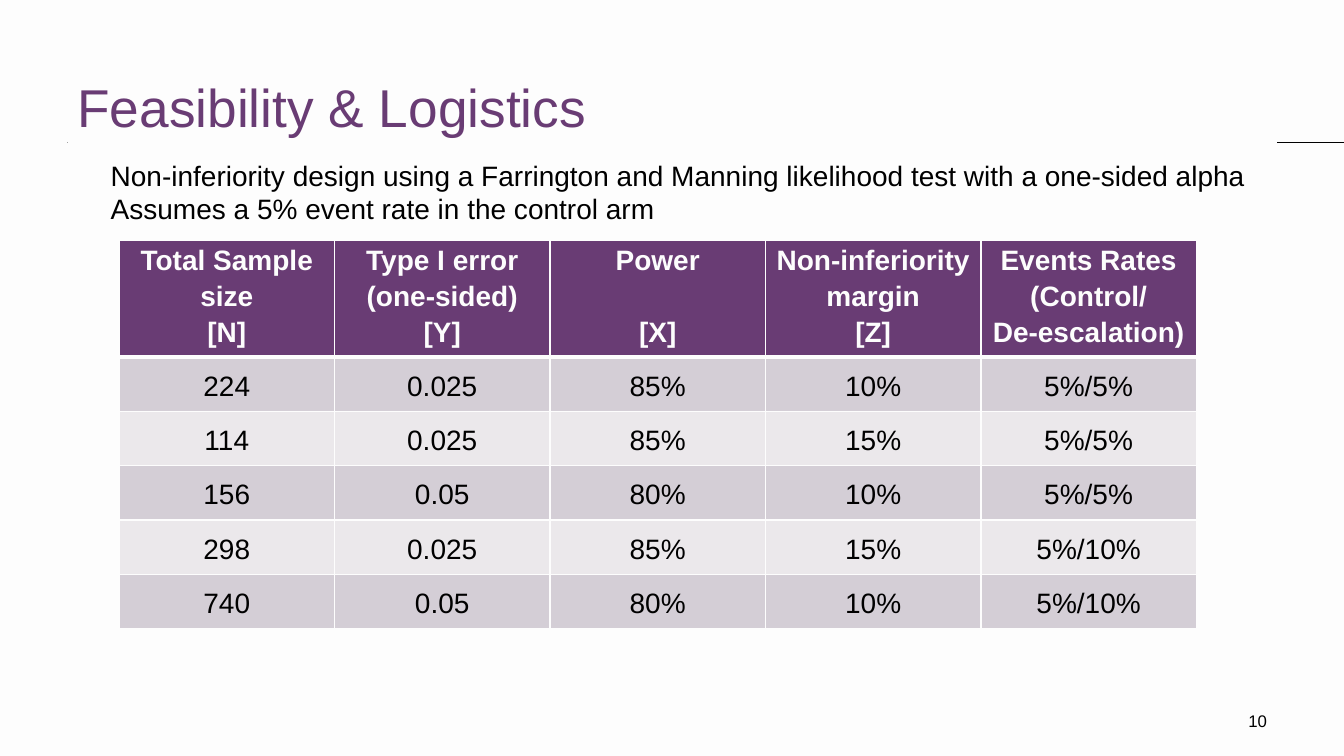
import pptx
import pptx.util
import pptx.dml.color
import pptx.enum.shapes
import pptx.enum.text
import pptx.oxml
import pptx.oxml.ns

Cm = pptx.util.Cm
Pt = pptx.util.Pt
RGBColor = pptx.dml.color.RGBColor
ALIGN = pptx.enum.text.PP_ALIGN
ANCHOR = pptx.enum.text.MSO_ANCHOR

PAPER = RGBColor(0xFD, 0xFD, 0xFD)
PLUM = RGBColor(0x69, 0x3C, 0x74)
DARK = RGBColor(0xD4, 0xCE, 0xD6)
LIGHT = RGBColor(0xEB, 0xE8, 0xEB)
BLACK = RGBColor(0, 0, 0)


def write(frame, text, size=20, color=BLACK, bold=False, align=ALIGN.LEFT,
          anchor=ANCHOR.TOP, space=1.0):
    frame.text = text
    frame.vertical_anchor = anchor
    for para in frame.paragraphs:
        para.alignment = align
        para.line_spacing = space
        para.space_before = Pt(0)
        para.font.name = "Arial"
        para.font.size = Pt(size)
        para.font.bold = bold
        para.font.color.rgb = color


def edge(cell, base):
    props = cell._tc.get_or_add_tcPr()
    widths = {"lnL": 1, "lnR": 1, "lnT": 1, "lnB": base}
    for spot, (tag, width) in enumerate(widths.items()):
        line = pptx.oxml.parse_xml(
            f'<a:{tag} {pptx.oxml.ns.nsdecls("a")} w="{Pt(width)}">'
            f'<a:solidFill><a:srgbClr val="{PAPER}"/></a:solidFill></a:{tag}>')
        props.insert(spot, line)


deck = pptx.Presentation()
deck.slide_width = Cm(33.87)
deck.slide_height = Cm(19.05)
slide = deck.slides.add_slide(deck.slide_layouts[5])
slide.background.fill.solid()
slide.background.fill.fore_color.rgb = PAPER

title = slide.shapes.title
title.left, title.top, title.width, title.height = Cm(1.7), Cm(0.43), Cm(30.48), Cm(3.17)
title.fill.solid()
title.fill.fore_color.rgb = PAPER
write(title.text_frame, "Feasibility & Logistics", size=38, color=PLUM,
      anchor=ANCHOR.BOTTOM)

rule = slide.shapes.add_connector(
    pptx.enum.shapes.MSO_CONNECTOR.STRAIGHT, Cm(1.7), Cm(3.6), Cm(33.87), Cm(3.6))
rule.line.color.rgb = BLACK
rule.line.width = Pt(0.75)
rule.element.spPr.append(
    pptx.oxml.parse_xml(f'<a:effectLst {pptx.oxml.ns.nsdecls("a")}/>'))
title.element.addprevious(rule.element)

number = slide.shapes.add_textbox(Cm(30.48), Cm(17.65), Cm(1.7), Cm(1.02))
number.text_frame.word_wrap = True
write(number.text_frame, "10", size=12, align=ALIGN.RIGHT, anchor=ANCHOR.MIDDLE)

heads = [
    "Total Sample size\n[N]",
    "Type I error\n(one-sided)\n[Y]",
    "Power\n[X]",
    "Non-inferiority margin\n[Z]",
    "Events Rates\n(Control/\vDe-escalation)",
]
rows = [
    ["224", "0.025", "85%", "10%", "5%/5%"],
    ["114", "0.025", "85%", "15%", "5%/5%"],
    ["156", "0.05", "80%", "10%", "5%/5%"],
    ["298", "0.025", "85%", "15%", "5%/10%"],
    ["740", "0.05", "80%", "10%", "5%/10%"],
]
grid = slide.shapes.add_table(
    len(rows) + 1, len(heads), Cm(3), Cm(6.07), Cm(27.15), Cm(9.57)).table
for col in grid.columns:
    col.width = Cm(5.43)
for r, texts in enumerate([heads] + rows):
    head = r == 0
    grid.rows[r].height = Cm(2.72 if head else 1.37)
    for c, text in enumerate(texts):
        cell = grid.cell(r, c)
        cell.margin_left = cell.margin_right = Cm(0.18)
        cell.margin_top = cell.margin_bottom = 0
        cell.fill.solid()
        cell.fill.fore_color.rgb = PLUM if head else DARK if r % 2 else LIGHT
        write(cell.text_frame, text, color=PAPER if head else BLACK, bold=head,
              align=ALIGN.CENTER, space=1.15)
        cell.vertical_anchor = ANCHOR.TOP if head else ANCHOR.MIDDLE
        edge(cell, 3 if head else 1)
grid.cell(0, 2).text_frame.paragraphs[1].space_before = Pt(25.7)

intro = slide.shapes.add_textbox(Cm(2.54), Cm(3.86), Cm(29.34), Cm(1.96))
intro.text_frame.word_wrap = False
intro.text_frame.auto_size = pptx.enum.text.MSO_AUTO_SIZE.SHAPE_TO_FIT_TEXT
write(intro.text_frame,
      "Non-inferiority design using a Farrington and Manning likelihood test "
      "with a one-sided alpha\nAssumes a 5% event rate in the control arm")

deck.save("out.pptx")
